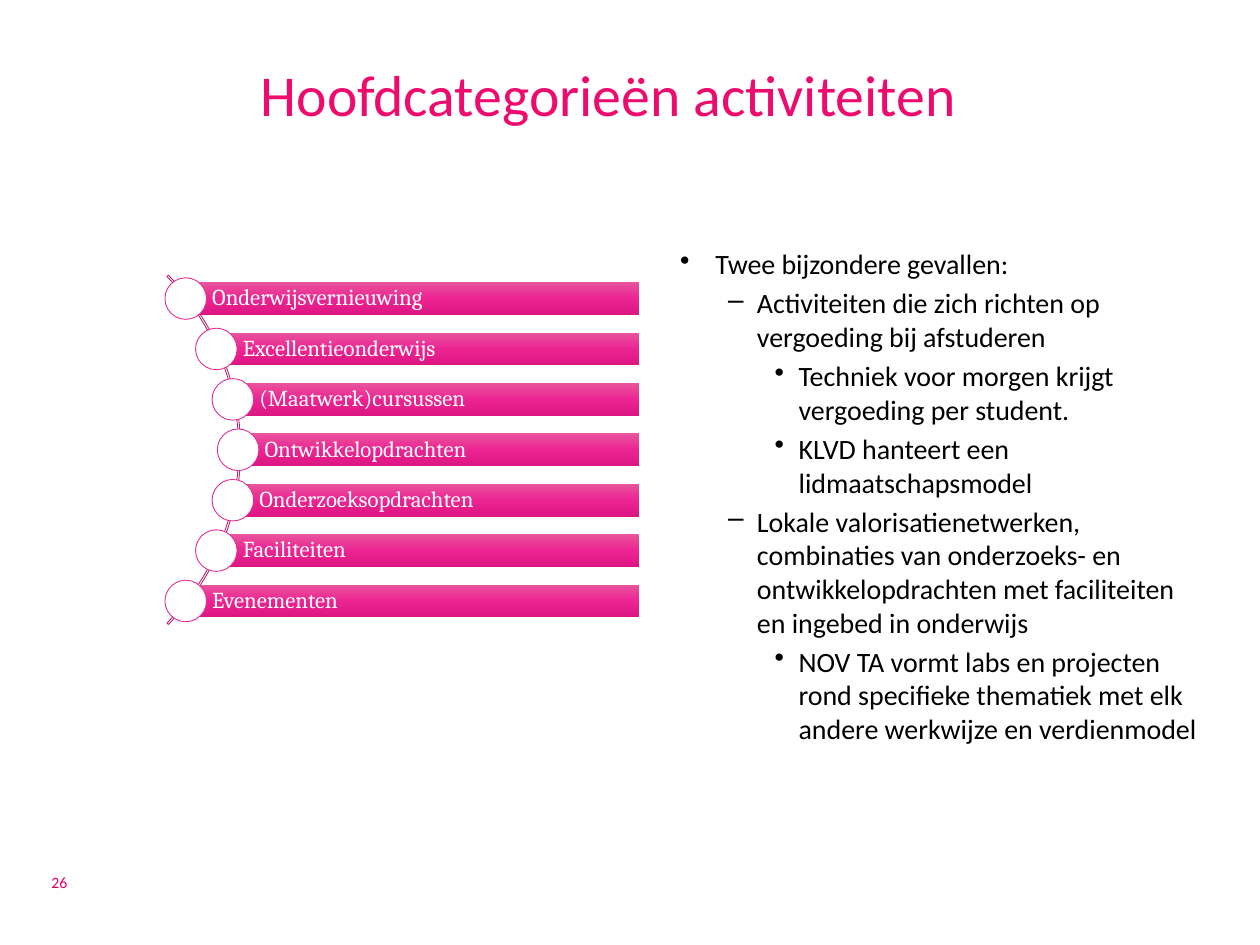
from copy import deepcopy
from math import sqrt

from pptx import Presentation
from pptx.dml.color import RGBColor
from pptx.enum.shapes import MSO_SHAPE
from pptx.enum.text import MSO_ANCHOR, PP_ALIGN
from pptx.oxml.ns import qn
from pptx.util import Inches, Pt

COLOURS = {
    "title": "ED0C6E", "number": "E50064", "text": "000000", "white": "FFFFFF",
    "arc": "B62474", "ring": "E32D91",
    "bar_top": "E8559D", "bar_middle": "EC2492", "bar_bottom": "DC1683",
}
CATEGORIES = [
    "Onderwijsvernieuwing", "Excellentieonderwijs", "(Maatwerk)cursussen",
    "Ontwikkelopdrachten", "Onderzoeksopdrachten", "Faciliteiten", "Evenementen",
]
CASES = [
    (0, "Twee bijzondere gevallen:"),
    (1, "Activiteiten die zich richten op vergoeding bij afstuderen"),
    (2, "Techniek voor morgen krijgt vergoeding per student."),
    (2, "KLVD hanteert een lidmaatschapsmodel"),
    (1, "Lokale valorisatienetwerken, combinaties van onderzoeks- en "
        "ontwikkelopdrachten met faciliteiten en ingebed in onderwijs"),
    (2, "NOV TA vormt labs en projecten rond specifieke thematiek met elk "
        "andere werkwijze en verdienmodel"),
]
LEVELS = [("•", 0.28, 0.28), ("–", 0.61, 0.23), ("•", 0.94, 0.19)]


def colour(name):
    """Return the named colour."""
    return RGBColor.from_string(COLOURS[name])


def style_font(para, size, name, family="Calibri"):
    """Set the font of a whole paragraph."""
    para.font.size = Pt(size)
    para.font.name = family
    para.font.color.rgb = colour(name)


def add_text_frame(page, box):
    """Add a wrapping text box and return its frame."""
    frame = page.shapes.add_textbox(*map(Inches, box)).text_frame
    frame.word_wrap = True
    return frame


def add_line(page, box, text, size, name):
    """Add a single line of text in the given box."""
    para = add_text_frame(page, box).paragraphs[0]
    para.text = text
    style_font(para, size, name)


def add_preset(page, preset, box):
    """Add a preset shape without a shadow."""
    shape = page.shapes.add_shape(preset, *map(Inches, box))
    shape.shadow.inherit = False
    return shape


def outline(shape, name):
    """Give a shape a thin outline."""
    shape.line.color.rgb = colour(name)
    shape.line.width = Pt(0.5)


def fill_bar(bar):
    """Fill a bar with a three-stop gradient from top to bottom."""
    bar.fill.gradient()
    bar.fill.gradient_angle = 270
    stop_list = bar.element.spPr.find(qn("a:gradFill")).find(qn("a:gsLst"))
    stop_list.append(deepcopy(stop_list[-1]))
    names = ("bar_top", "bar_middle", "bar_bottom")
    for index, (stop, name) in enumerate(zip(bar.fill.gradient_stops, names)):
        stop.position = index / 2
        stop.color.rgb = colour(name)
    bar.line.fill.background()


def add_bar(page, box, label):
    """Add a labelled category bar."""
    bar = add_preset(page, MSO_SHAPE.RECTANGLE, box)
    fill_bar(bar)
    frame = bar.text_frame
    frame.word_wrap = True
    frame.vertical_anchor = MSO_ANCHOR.MIDDLE
    frame.margin_left = Inches(0.21)
    frame.margin_top = frame.margin_right = frame.margin_bottom = Inches(0.04)
    para = frame.paragraphs[0]
    para.text = label
    para.alignment = PP_ALIGN.LEFT
    para.line_spacing = 0.9
    style_font(para, 13, "white", "Cambria")


def add_category_arc(page, box):
    """Add the arc with one bar and circle per category along it."""
    left, top, width, height = box
    centre_x, centre_y = left + width / 2, top + height / 2
    radius, pitch, bar_height, diameter, right = 1.94, 0.4, 0.26, 0.33, 5.07
    arc = add_preset(page, MSO_SHAPE.BLOCK_ARC, box)
    for index, value in enumerate((189, 27, 0.004)):
        arc.adjustments[index] = value
    arc.fill.background()
    outline(arc, "arc")
    for index, label in enumerate(CATEGORIES):
        offset = (index - (len(CATEGORIES) - 1) / 2) * pitch
        x, y = centre_x + sqrt(radius ** 2 - offset ** 2), centre_y + offset
        add_bar(page, (x, y - bar_height / 2, right - x, bar_height), label)
        circle = add_preset(page, MSO_SHAPE.OVAL,
                            (x - diameter / 2, y - diameter / 2, diameter, diameter))
        circle.fill.solid()
        circle.fill.fore_color.rgb = colour("white")
        outline(circle, "ring")


def add_cases(page, box):
    """Add the bulleted list of special cases."""
    frame = add_text_frame(page, box)
    for index, (level, text) in enumerate(CASES):
        para = frame.add_paragraph() if index else frame.paragraphs[0]
        para.text = text
        para.level = level
        para.space_before = Pt(3.2)
        style_font(para, 16, "text")
        mark, margin, hang = LEVELS[level]
        properties = para._p.get_or_add_pPr()
        properties.set("marL", str(Inches(margin)))
        properties.set("indent", str(-Inches(hang)))
        bullet = properties.makeelement(qn("a:buChar"), {"char": mark})
        properties.find(qn("a:defRPr")).addprevious(bullet)


def main():
    """Build the slide and save the deck."""
    deck = Presentation()
    deck.slide_width, deck.slide_height = Inches(10), Inches(7.5)
    page = deck.slides.add_slide(deck.slide_layouts[6])
    add_line(page, (0.31, 6.88, 1.85, 0.25), "26", 9, "number")
    add_line(page, (1.97, 0.42, 6.82, 0.45), "Hoofdcategorieën activiteiten", 33, "title")
    add_category_arc(page, (-2.01, 1.61, 3.92, 3.92))
    add_cases(page, (5.3, 1.91, 4.33, 4.3))
    deck.save("out.pptx")


if __name__ == "__main__":
    main()
